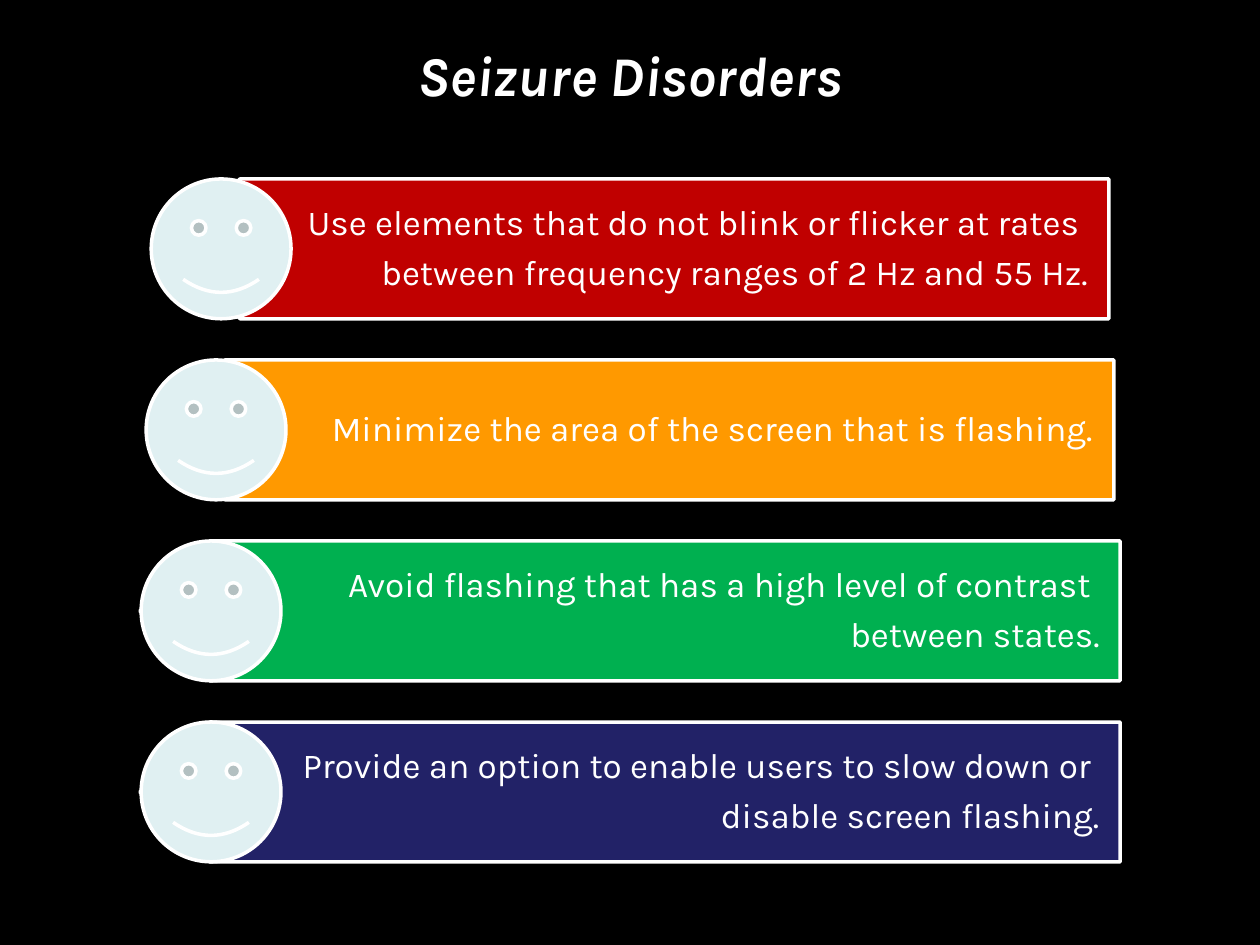
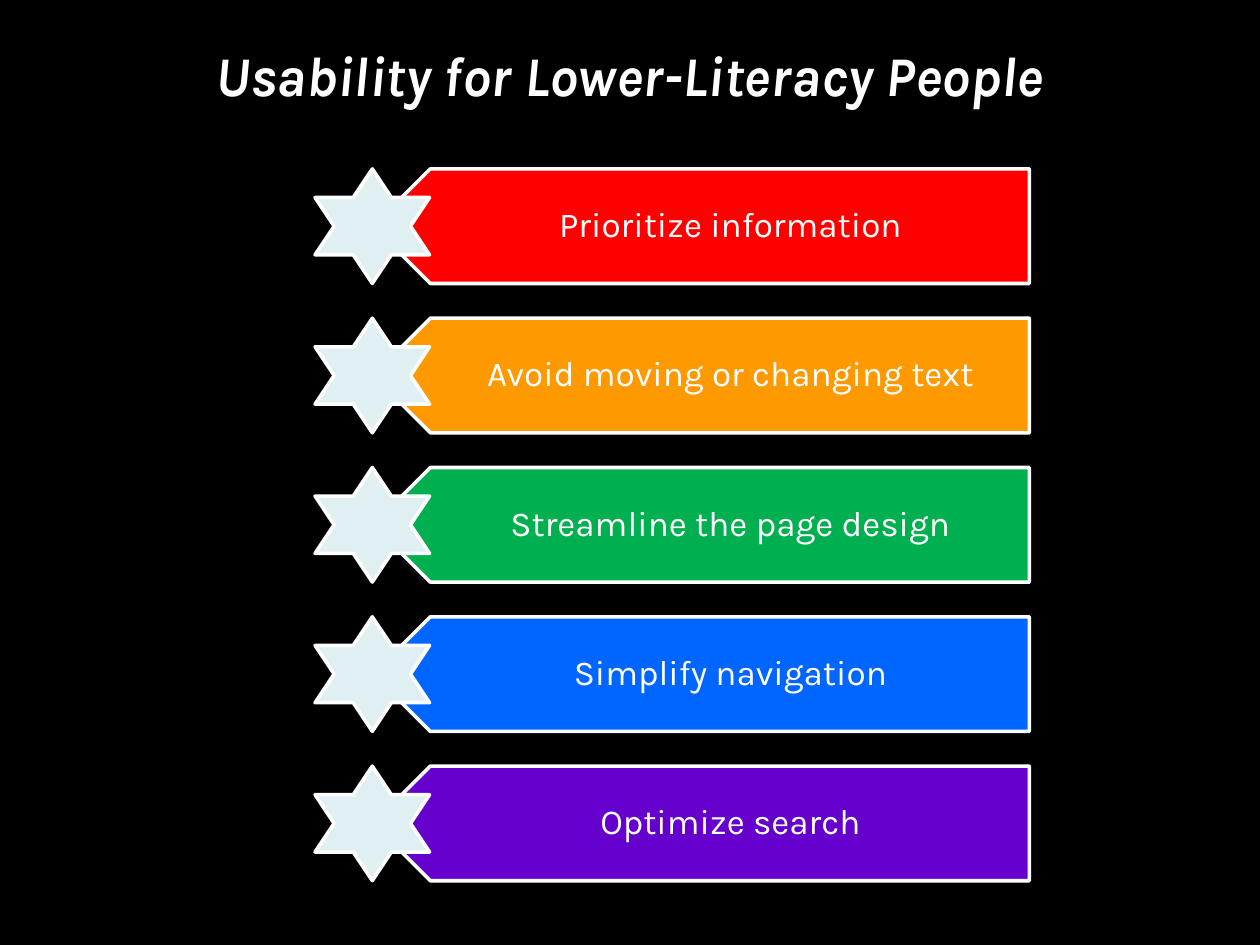
from pptx import Presentation
from pptx import util as u
from pptx.dml.color import RGBColor
from pptx.enum import shapes, text

FONT = "Karla"
BLACK, WHITE, PALE = "000000", "FFFFFF", "E0F0F2"
ORANGE, GREEN = "FF9900", "00B050"
TITLE_FORMAT = {"size": u.Pt(32), "bold": True, "italic": True}
BODY_FORMAT = {"size": u.Pt(20)}
TITLE_SPACING = {}
BODY_SPACING = {"line_spacing": 0.9, "space_after": u.Pt(7)}
CENTER, RIGHT = text.PP_ALIGN.CENTER, text.PP_ALIGN.RIGHT

SEIZURE_ROWS = [
    ("C00000", 1.35, 7.45, 1.2,
     ["Use elements that do not blink or flicker at rates ",
      "between frequency ranges of 2 Hz and 55 Hz."]),
    (ORANGE, 1.23, 7.61, 1.16,
     ["Minimize the area of the screen that is flashing."]),
    (GREEN, 1.11, 7.78, 1.12,
     ["Avoid flashing that has a high level of contrast ",
      "between states."]),
    ("222267", 1.11, 7.78, 1.12,
     ["Provide an option to enable users to slow down or ",
      "disable screen flashing."]),
]
LITERACY_ROWS = [
    (color, 2.96, 5.21, 2.5, [advice])
    for color, advice in [
        ("FF0000", "Prioritize information"),
        (ORANGE, "Avoid moving or changing text"),
        (GREEN, "Streamline the page design"),
        ("0066FF", "Simplify navigation"),
        ("6600CC", "Optimize search"),
    ]
]


def rgb(code):
    return RGBColor.from_string(code)


def set_all(target, values):
    for name, value in values.items():
        setattr(target, name, value)


def add_words(parent, box, lines, align, font_format, spacing, margins):
    frame = parent.add_textbox(*map(u.Inches, box)).text_frame
    set_all(frame, {"word_wrap": True, "vertical_anchor": text.MSO_ANCHOR.MIDDLE})
    sides = ("margin_left", "margin_top", "margin_right", "margin_bottom")
    set_all(frame, dict(zip(sides, map(u.Inches, margins))))
    for index, line in enumerate(lines):
        paragraph = frame.add_paragraph() if index else frame.paragraphs[0]
        set_all(paragraph, {"alignment": align, **spacing})
        run = paragraph.add_run()
        run.text = line
        set_all(run.font, {"name": FONT, **font_format})
        run.font.color.rgb = rgb(WHITE)


def add_outlined(parent, kind, box, color, rotation=0):
    figure = parent.add_shape(kind, *map(u.Inches, box))
    figure.rotation = rotation
    figure.shadow.inherit = False
    figure.fill.solid()
    figure.fill.fore_color.rgb = rgb(color)
    figure.line.color.rgb = rgb(WHITE)
    figure.line.width = u.Pt(2)


def add_titled_slide(deck, title):
    slide = deck.slides.add_slide(deck.slide_layouts[6])
    slide.background.fill.solid()
    slide.background.fill.fore_color.rgb = rgb(BLACK)
    add_words(slide.shapes, (0, 0, 10, 1.17), [title], CENTER,
              TITLE_FORMAT, TITLE_SPACING, (0.1, 0.05, 0.1, 0.05))
    return slide


def add_advice_list(slide, rows, badge, first_top, last_top, height, align, indent):
    group = slide.shapes.add_group_shape().shapes
    step = (last_top - first_top) / (len(rows) - 1)
    point = height / 4
    for index, (color, left, width, badge_left, lines) in enumerate(rows):
        top = first_top + index * step
        add_outlined(group, shapes.MSO_SHAPE.PENTAGON,
                     (left, top, width, height), color, 180)
        add_words(group, (left + point, top, width - point, height), lines, align,
                  BODY_FORMAT, BODY_SPACING, (indent, 0.08, 0.16, 0.08))
        add_outlined(group, badge, (badge_left, top, height, height), PALE)


def main():
    deck = Presentation()
    set_all(deck, {"slide_width": u.Inches(10), "slide_height": u.Inches(7.5)})
    seizures = add_titled_slide(deck, "Seizure Disorders")
    add_advice_list(seizures, SEIZURE_ROWS, shapes.MSO_SHAPE.SMILEY_FACE,
                    1.42, 5.73, 1.11, RIGHT, 0.49)
    literacy = add_titled_slide(deck, "Usability for Lower-Literacy People")
    add_advice_list(literacy, LITERACY_ROWS, shapes.MSO_SHAPE.STAR_6_POINT,
                    1.34, 6.08, 0.91, CENTER, 0.4)
    deck.save("out.pptx")


if __name__ == "__main__":
    main()
